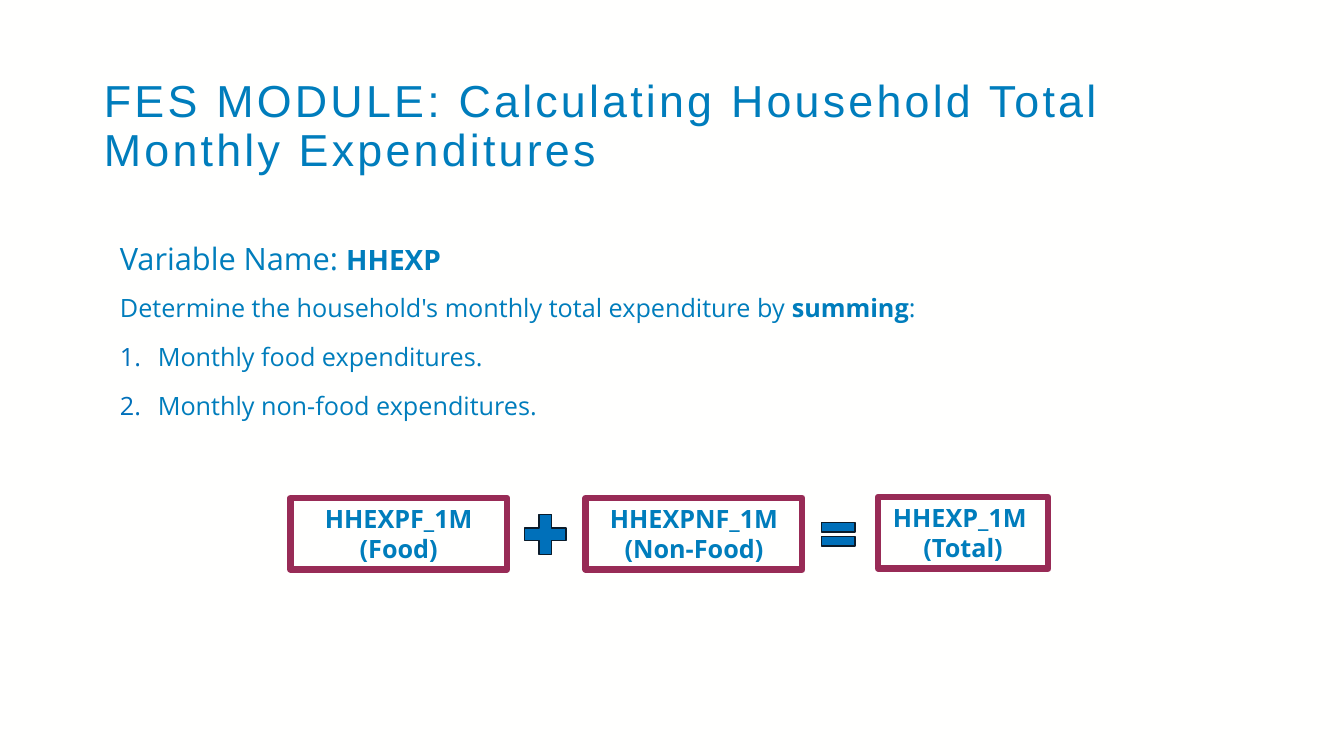
"""Build the slide on calculating household total monthly expenditures."""
from dataclasses import dataclass

from lxml import etree
from pptx import Presentation
from pptx import util as u
from pptx.dml import color
from pptx.enum import shapes, text
from pptx.oxml import ns

BLUE, MAROON, SYMBOL, OUTLINE = "007DBC", "982B56", "0070BA", "0B1C2B"


@dataclass
class Term:
    variable: str
    label: str
    left: float
    top: float
    width: float


@dataclass
class Operator:
    kind: shapes.MSO_SHAPE
    left: float
    top: float
    width: float
    height: float


TERMS = [
    Term("HHEXPF_1M", "(Food)", 207.4, 355.7, 154.8),
    Term("HHEXPNF_1M", "(Non-Food)", 418.3, 355.7, 154.8),
    Term("HHEXP_1M ", "(Total)", 627.1, 355, 121.7),
]
OPERATORS = [
    Operator(shapes.MSO_SHAPE.MATH_PLUS, 369.4, 362.2, 40.3, 38.9),
    Operator(shapes.MSO_SHAPE.MATH_EQUAL, 582.5, 367.2, 32.4, 28.8),
]
TERM_HEIGHT = 51.1


def paint(target, hex_color: str) -> None:
    """Give a fill a solid colour."""
    target.solid()
    target.fore_color.rgb = color.RGBColor.from_string(hex_color)


def place(shape, left: float, top: float, width: float, height: float) -> None:
    """Set the position and size of a shape in points."""
    shape.left, shape.top = u.Pt(left), u.Pt(top)
    shape.width, shape.height = u.Pt(width), u.Pt(height)


def style(paragraph, size: float, family: str = "Open Sans", bold: bool = False) -> None:
    """Set the font shared by all runs of a paragraph."""
    font = paragraph.font
    font.size, font.name, font.bold = u.Pt(size), family, bold
    paint(font.fill, BLUE)


def set_list_format(paragraph, numbered: bool = False) -> None:
    """Set spacing, indent, numbering and tab stop of a text line."""
    paragraph.line_spacing = 1.15
    paragraph.space_before, paragraph.space_after = u.Pt(0), u.Pt(10)
    properties = paragraph._p.get_or_add_pPr()
    indent = u.Pt(27) if numbered else 0
    properties.set("marL", str(indent))
    properties.set("indent", str(-indent))

    def add(parent, tag: str, **attributes: str):
        return etree.SubElement(parent, ns.qn(tag), attributes)

    if numbered:
        add(add(properties, "a:buClr"), "a:srgbClr", val=SYMBOL)
        add(properties, "a:buFont", typeface="+mj-lt")
        add(properties, "a:buAutoNum", type="arabicPeriod")
    else:
        add(properties, "a:buNone")
    add(add(properties, "a:tabLst"), "a:tab", pos=str(u.Pt(36)), algn="l")


def add_title(slide) -> None:
    """Fill the title placeholder."""
    title = slide.shapes.title
    place(title, 67, 61.9, 830.2, 90.7)
    frame = title.text_frame
    frame.auto_size = text.MSO_AUTO_SIZE.NONE
    frame.vertical_anchor = text.MSO_ANCHOR.MIDDLE
    frame.margin_bottom = u.Pt(36)
    heading = frame.paragraphs[0]
    heading.alignment = text.PP_ALIGN.LEFT
    heading.line_spacing = 0.9
    style(heading, 32, "Arial")
    run = heading.add_run()
    run.text = "FES MODULE: Calculating Household Total Monthly Expenditures"
    run._r.get_or_add_rPr().set("spc", "230")


def add_steps(slide) -> None:
    """Fill the body placeholder with the instruction and its steps."""
    body = slide.placeholders[1]
    place(body, 78.5, 202.3, 830.2, 322.6)
    frame = body.text_frame
    frame.auto_size = text.MSO_AUTO_SIZE.NONE
    instruction = frame.paragraphs[0]
    set_list_format(instruction)
    style(instruction, 18)
    for wording, bold in [
        ("Determine the household's monthly total expenditure by ", False),
        ("summing", True),
        (":", False),
    ]:
        run = instruction.add_run()
        run.text, run.font.bold = wording, bold
    for wording in ("Monthly food expenditures.", "Monthly non-food expenditures."):
        step = frame.add_paragraph()
        step.text = wording
        set_list_format(step, numbered=True)
        style(step, 18)


def add_variable_name(slide) -> None:
    """Add the line that names the variable."""
    box = slide.shapes.add_textbox(u.Pt(78.5), u.Pt(163.4), u.Pt(830.2), u.Pt(322.6))
    box.text_frame.word_wrap = True
    line = box.text_frame.paragraphs[0]
    set_list_format(line)
    style(line, 22)
    line.add_run().text = "Variable Name: "
    variable = line.add_run()
    variable.text = "HHEXP"
    variable.font.size, variable.font.bold = u.Pt(20), True


def add_shape(slide, kind, bounds: tuple, line_color: str, line_width: float):
    """Add an outlined shape without shadow."""
    shape = slide.shapes.add_shape(kind, *(u.Pt(value) for value in bounds))
    shape.shadow.inherit = False
    paint(shape.line.fill, line_color)
    shape.line.width = u.Pt(line_width)
    return shape


def add_term(slide, term: Term) -> None:
    """Add one framed term of the sum."""
    bounds = (term.left, term.top, term.width, TERM_HEIGHT)
    box = add_shape(slide, shapes.MSO_SHAPE.RECTANGLE, bounds, MAROON, 4.5)
    box.fill.background()
    frame = box.text_frame
    frame.word_wrap = True
    frame.auto_size = text.MSO_AUTO_SIZE.SHAPE_TO_FIT_TEXT
    frame.vertical_anchor = text.MSO_ANCHOR.TOP
    frame.text = f"{term.variable}\n{term.label}"
    for paragraph in frame.paragraphs:
        paragraph.alignment = text.PP_ALIGN.CENTER
        style(paragraph, 18, bold=True)


def add_operator(slide, operator: Operator) -> None:
    """Add a plus or equals sign."""
    bounds = (operator.left, operator.top, operator.width, operator.height)
    sign = add_shape(slide, operator.kind, bounds, OUTLINE, 1)
    paint(sign.fill, SYMBOL)


def main() -> None:
    """Build and save the presentation."""
    deck = Presentation()
    deck.slide_width, deck.slide_height = u.Pt(960), u.Pt(540)
    slide = deck.slides.add_slide(deck.slide_layouts[1])
    paint(slide.background.fill, "FFFFFE")
    add_title(slide)
    add_steps(slide)
    add_variable_name(slide)
    for term in TERMS:
        add_term(slide, term)
    for operator in OPERATORS:
        add_operator(slide, operator)
    deck.save("out.pptx")


if __name__ == "__main__":
    main()
